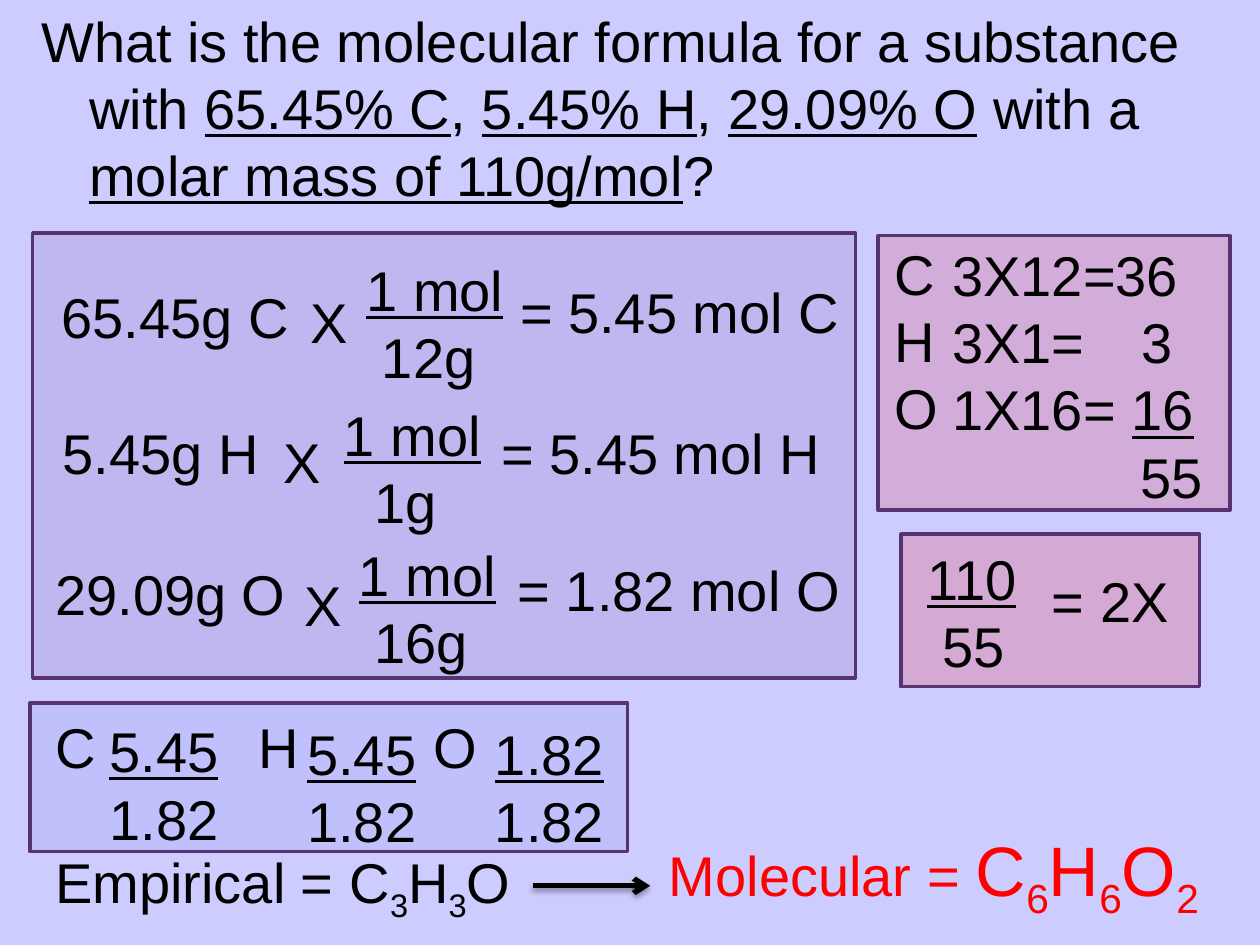
from dataclasses import dataclass

import pptx
import pptx.dml.color
import pptx.enum.shapes
import pptx.enum.text
import pptx.oxml
import pptx.oxml.ns
import pptx.util

# Grid of 100 columns by 75 rows; every length below is in these units.
SLIDE_WIDTH = pptx.util.Inches(10)
SLIDE_HEIGHT = pptx.util.Inches(7.5)
COLUMN = SLIDE_WIDTH // 100
ROW = SLIDE_HEIGHT // 75
LINE_ROWS, PAIR_ROWS = 6.4, 11.8
FONT = "Arial"
COLORS = {
    "background": "CCCCFF",
    "text": "000000",
    "answer": "FF0000",
    "border": "573371",
    "pink": "FF0000",
    "blue": "0000E6",
    "purple": "764599",
}


@dataclass(frozen=True)
class Area:
    column: float
    row: float
    columns: float
    rows: float

    def lengths(self) -> tuple[int, int, int, int]:
        return (int(self.column * COLUMN), int(self.row * ROW),
                int(self.columns * COLUMN), int(self.rows * ROW))


@dataclass(frozen=True)
class Panel:
    area: Area
    color: str
    opacity: int


@dataclass(frozen=True)
class Run:
    text: str
    underline: bool = False
    subscript: bool = False
    size: int = 32


@dataclass(frozen=True)
class Line:
    runs: tuple[Run, ...]
    indent: float = 0
    hanging: float = 0
    tab: float = 0


@dataclass(frozen=True)
class Label:
    area: Area
    lines: tuple[Line, ...]
    color: str = "text"
    wrap: bool = False


def rgb(name: str) -> pptx.dml.color.RGBColor:
    return pptx.dml.color.RGBColor.from_string(COLORS[name])


def plain(text: str, **layout: float) -> Line:
    return Line((Run(text),), **layout)


def fraction(column: float, row: float, columns: float,
             top: str, bottom: str, indent: float = 0) -> Label:
    """Underlined numerator above an indented denominator."""
    return Label(Area(column, row, columns, PAIR_ROWS),
                 (Line((Run(top, underline=True),)), plain(bottom, indent=indent)))


def single(column: float, row: float, columns: float, text: str) -> Label:
    return Label(Area(column, row, columns, LINE_ROWS), (plain(text),))


def formula(parts: str, size: int) -> tuple[Run, ...]:
    """Element symbols with their digits lowered."""
    return tuple(Run(part, subscript=part.isdigit(), size=size) for part in parts)


PANELS = (
    Panel(Area(71.5, 42.4, 23.7, 12.1), "pink", 17),
    Panel(Area(69.7, 18.7, 27.9, 21.8), "pink", 15),
    Panel(Area(2.4, 55.8, 47.4, 11.8), "blue", 6),
    Panel(Area(2.6, 18.5, 65.3, 35.3), "purple", 15),
)

QUESTION = Label(Area(2.3, 0, 95.5, 17.6), (Line((
    Run("What is the molecular formula for a substance with "),
    Run("65.45% C", underline=True), Run(", "),
    Run("5.45% H", underline=True), Run(", "),
    Run("29.09% O", underline=True), Run(" with a "),
    Run("molar mass of 110g/mol", underline=True), Run("?"),
), indent=3.8, hanging=3.8),), wrap=True)

MOLE_STEPS = (
    single(3.9, 21.9, 20.2, "65.45g C"),
    single(23.7, 22.3, 5, "X"),
    fraction(28.1, 19.8, 13, "1 mol", "12g", 1.23),
    single(40.3, 21.5, 27.6, "= 5.45 mol C"),
    single(4, 32.7, 17.7, "5.45g H"),
    single(21.5, 33.4, 5, "X"),
    fraction(26.3, 31.3, 13, "1 mol", "1g", 2.46),
    single(38.8, 32.7, 27.6, "= 5.45 mol H"),
    single(3.4, 43.9, 20.4, "29.09g O"),
    single(23.2, 44.8, 5, "X"),
    fraction(27.5, 42.4, 13, "1 mol", "16g", 1.23),
    single(40.1, 43.6, 27.8, "= 1.82 mol O"),
)

RATIOS = (
    single(3.4, 56.1, 5.2, "C"),
    fraction(7.7, 56.4, 10.7, "5.45", "1.82"),
    single(19.5, 56.1, 5.2, "H"),
    fraction(23.4, 56.6, 10.7, "5.45", "1.82"),
    single(33.4, 56.1, 5.5, "O"),
    fraction(38.3, 56.6, 10.7, "1.82", "1.82"),
)

MASSES = (
    Label(Area(70, 18.5, 5.3, 17.2), tuple(plain(symbol) for symbol in "CHO"), wrap=True),
    Label(Area(74.6, 18.6, 25.4, 22.6), (
        plain("3X12=36"),
        plain("3X1=\t3", tab=16.65),
        Line((Run("1X16= "), Run("16", underline=True))),
        plain("55", indent=14.9),
    ), wrap=True),
    fraction(72.6, 42.7, 9.5, "110", "55", 1.23),
    single(82.5, 44.5, 11.4, "= 2X"),
)

RESULTS = (
    Label(Area(3.4, 66.8, 38.9, LINE_ROWS),
          (Line((Run("Empirical = "), *formula("C3H3O", 32))),)),
    Label(Area(52.1, 65.1, 47.9, 7.8),
          (Line((Run("Molecular = "), *formula("C6H6O2", 40))),),
          color="answer", wrap=True),
)


def draw_panel(slide, panel: Panel) -> None:
    shape = slide.shapes.add_shape(pptx.enum.shapes.MSO_SHAPE.RECTANGLE, *panel.area.lengths())
    shape.shadow.inherit = False
    shape.fill.solid()
    shape.fill.fore_color.rgb = rgb(panel.color)
    color = shape.fill._xPr.find(".//" + pptx.oxml.ns.qn("a:srgbClr"))
    alpha = color.makeelement(pptx.oxml.ns.qn("a:alpha"), {"val": str(panel.opacity * 1000)})
    color.append(alpha)
    shape.line.color.rgb = rgb("border")
    shape.line.width = pptx.util.Pt(2)


def set_layout(paragraph, line: Line) -> None:
    properties = paragraph._p.get_or_add_pPr()
    properties.set("marL", str(int(line.indent * COLUMN)))
    properties.set("indent", str(int(-line.hanging * COLUMN)))
    if line.tab:
        properties.append(pptx.oxml.parse_xml(
            f'<a:tabLst {pptx.oxml.ns.nsdecls("a")}>'
            f'<a:tab pos="{int(line.tab * COLUMN)}" algn="l"/></a:tabLst>'))


def draw_label(slide, label: Label) -> None:
    text_frame = slide.shapes.add_textbox(*label.area.lengths()).text_frame
    text_frame.word_wrap = label.wrap
    text_frame.auto_size = pptx.enum.text.MSO_AUTO_SIZE.NONE
    for index, line in enumerate(label.lines):
        paragraph = text_frame.add_paragraph() if index else text_frame.paragraphs[0]
        set_layout(paragraph, line)
        for part in line.runs:
            run = paragraph.add_run()
            run.text = part.text
            run.font.name = FONT
            run.font.size = pptx.util.Pt(part.size)
            run.font.color.rgb = rgb(label.color)
            run.font.underline = part.underline
            if part.subscript:
                run.font._element.set("baseline", "-25000")


def draw_arrow(slide, start: float, end: float, row: float) -> None:
    connector = slide.shapes.add_connector(
        pptx.enum.shapes.MSO_CONNECTOR.STRAIGHT,
        int(start * COLUMN), int(row * ROW), int(end * COLUMN), int(row * ROW))
    connector.line.color.rgb = rgb("text")
    connector.line.width = pptx.util.Pt(3)
    namespace = pptx.oxml.ns.nsdecls("a")
    connector.line._get_or_add_ln().append(
        pptx.oxml.parse_xml(f'<a:tailEnd {namespace} type="arrow"/>'))
    connector._element.spPr.append(pptx.oxml.parse_xml(
        f'<a:effectLst {namespace}><a:outerShdw blurRad="{pptx.util.Pt(3.1)}" '
        f'dist="{pptx.util.Pt(1.8)}" dir="5400000" rotWithShape="0">'
        f'<a:srgbClr val="{COLORS["text"]}"><a:alpha val="35000"/></a:srgbClr>'
        '</a:outerShdw></a:effectLst>'))


def main() -> None:
    presentation = pptx.Presentation()
    presentation.slide_width = SLIDE_WIDTH
    presentation.slide_height = SLIDE_HEIGHT
    slide = presentation.slides.add_slide(presentation.slide_layouts[6])
    slide.background.fill.solid()
    slide.background.fill.fore_color.rgb = rgb("background")
    for panel in PANELS:
        draw_panel(slide, panel)
    for label in (QUESTION, *MOLE_STEPS, *RATIOS, *MASSES, *RESULTS):
        draw_label(slide, label)
    draw_arrow(slide, 42.3, 51.6, 70.3)
    presentation.save("out.pptx")


if __name__ == "__main__":
    main()
